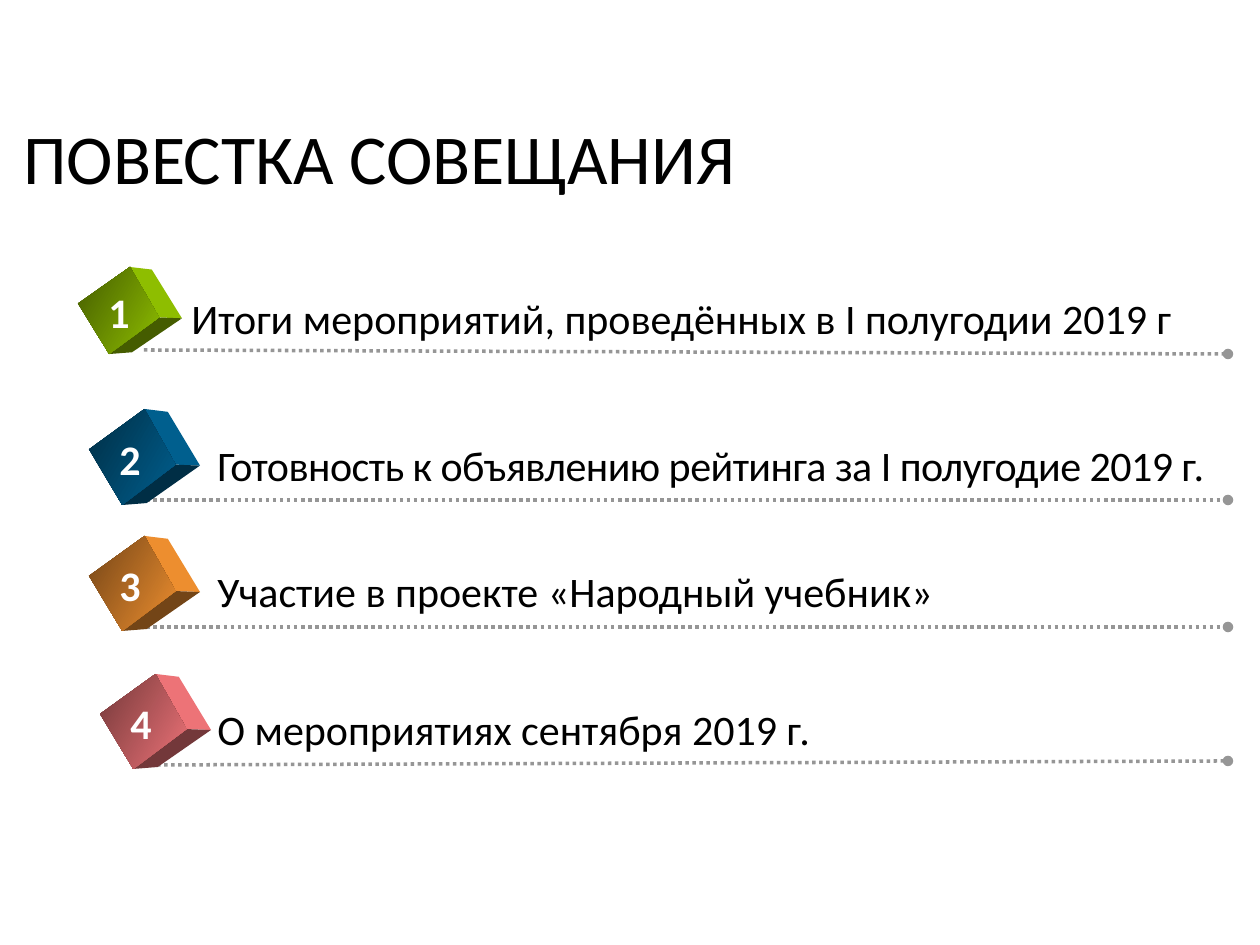
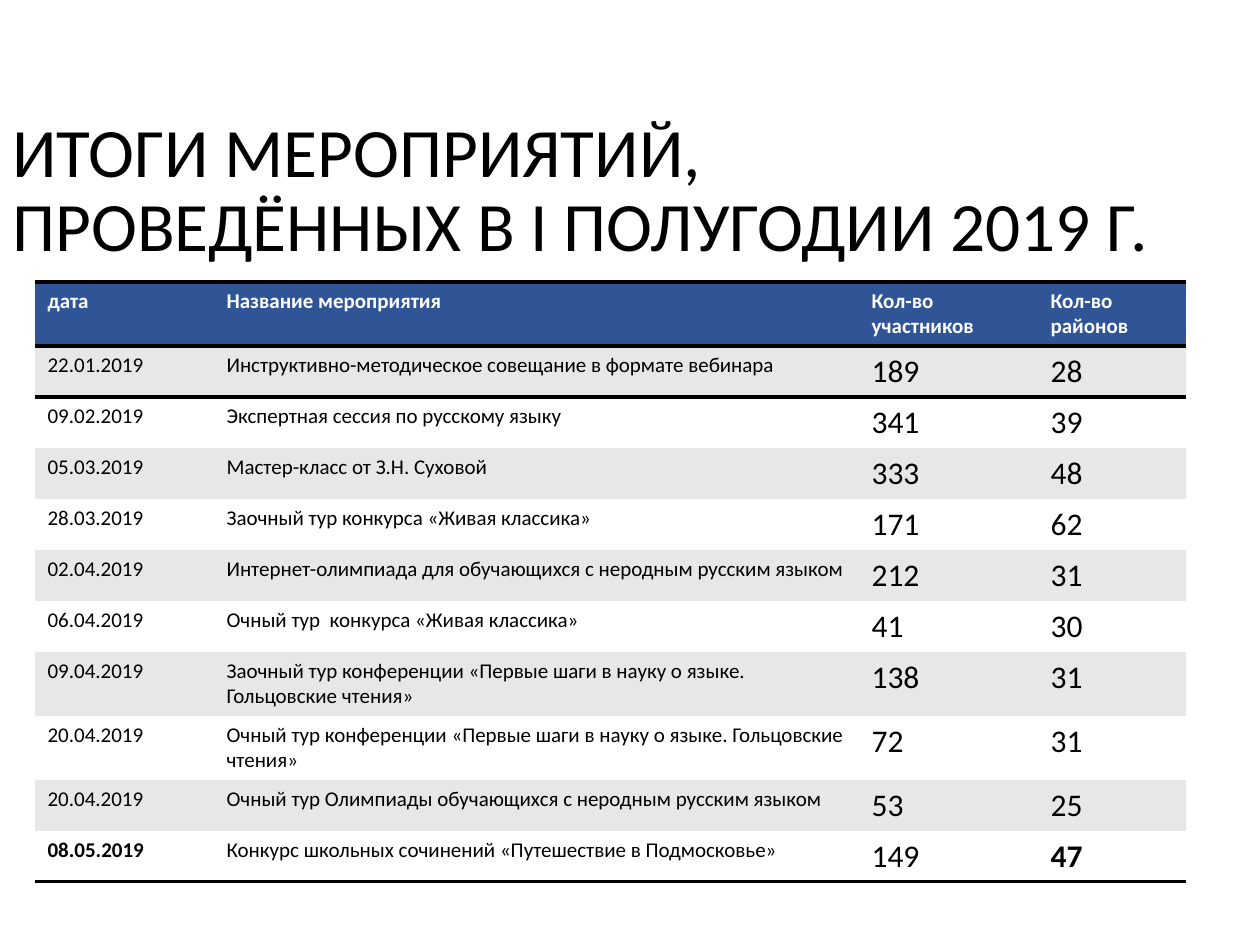
from typing import NamedTuple

from lxml import etree
from pptx import Presentation
from pptx.dml.color import RGBColor
from pptx.enum.dml import MSO_LINE
from pptx.enum.shapes import MSO_CONNECTOR
from pptx.enum.text import MSO_ANCHOR
from pptx.oxml.ns import qn
from pptx.util import Emu, Pt

FONT = "Calibri"
BLACK, WHITE, GREY = "000000", "FFFFFF", "969696"
HEADER, BAND = "2F5597", "E7E7E7"
NO_TABLE_STYLE = "{2D5ABB26-0587-4C30-8999-92F81FD0307C}"
LINE_END = 1228

# Corners of a cube, as fractions of its bounding box
LEFT, TOP, INNER, BOTTOM = (0, 0.42), (0.5, 0), (0.78, 0.58), (0.3, 1)
TOP_BACK, RIGHT, BOTTOM_BACK = (0.71, 0.03), (1, 0.59), (0.52, 0.98)


class AgendaItem(NamedTuple):
    text: str
    color: str
    cube: tuple[int, int, int, int]
    text_x: int
    line: tuple[int, int, int]  # start x, start y, end y
    spacing: int = 0


class Event(NamedTuple):
    date: str
    name: str
    people: str
    districts: str
    bold: bool = False
    height: int = 51


AGENDA = [
    AgendaItem("Итоги мероприятий, проведённых в I полугодии 2019 г", "99CC00",
               (78, 267, 104, 87), 179, (144, 350, 354)),
    AgendaItem("Готовность к объявлению рейтинга за I полугодие 2019 г.", "006699",
               (89, 409, 111, 96), 205, (139, 500, 500), -30),
    AgendaItem("Участие в проекте «Народный учебник»", "FF9933",
               (89, 536, 111, 95), 205, (139, 627, 627)),
    AgendaItem("О мероприятиях сентября 2019 г.", "FF7C80",
               (100, 674, 111, 95), 205, (150, 765, 761)),
]

EVENTS = [
    Event("22.01.2019", "Инструктивно-методическое совещание в формате вебинара", "189", "28"),
    Event("09.02.2019", "Экспертная сессия по русскому языку", "341", "39"),
    Event("05.03.2019", "Мастер-класс от З.Н. Суховой", "333", "48"),
    Event("28.03.2019", "Заочный тур конкурса «Живая классика»", "171", "62"),
    Event("02.04.2019", "Интернет-олимпиада для обучающихся с неродным русским языком",
          "212", "31"),
    Event("06.04.2019", "Очный тур  конкурса «Живая классика»", "41", "30"),
    Event("09.04.2019", "Заочный тур конференции «Первые шаги в науку о языке. "
          "Гольцовские чтения»", "138", "31", height=64),
    Event("20.04.2019", "Очный тур конференции «Первые шаги в науку о языке. "
          "Гольцовские чтения»", "72", "31", height=64),
    Event("20.04.2019", "Очный тур Олимпиады обучающихся с неродным русским языком",
          "53", "25"),
    Event("08.05.2019", "Конкурс школьных сочинений «Путешествие в Подмосковье»",
          "149", "47", bold=True),
]
COLUMNS = [("дата", 179), ("Название мероприятия", 645),
           ("Кол-во участников", 179), ("Кол-во\nрайонов", 148)]


def px(n: float) -> Emu:
    return Emu(round(n * 914400 / 126))


def rgb(color: str) -> RGBColor:
    return RGBColor.from_string(color)


def shade(color: str, factor: float) -> str:
    return "".join(f"{round(int(color[i:i + 2], 16) * factor):02X}" for i in (0, 2, 4))


def add_run(p, text: str, size: float, color: str = BLACK, bold: bool = False):
    r = p.add_run()
    r.text = text
    r.font.name, r.font.size, r.font.bold = FONT, Pt(size), bold
    r.font.color.rgb = rgb(color)
    return r


def add_box(s, x: int, y: int, w: int, h: int):
    tf = s.shapes.add_textbox(px(x), px(y), px(w), px(h)).text_frame
    tf.word_wrap = True
    return tf


def add_title(s, lines: list[str], x: int, y: int, w: int, h: int, size: float) -> None:
    tf = add_box(s, x, y, w, h)
    tf.vertical_anchor = MSO_ANCHOR.MIDDLE
    p = tf.paragraphs[0]
    p.line_spacing = 0.9
    for i, line in enumerate(lines):
        if i:
            p.add_line_break()
        add_run(p, line, size)


def add_dotted_line(s, x: int, y: int, end_y: int) -> None:
    line = s.shapes.add_connector(MSO_CONNECTOR.STRAIGHT, px(x), px(y), px(LINE_END), px(end_y))
    line.line.color.rgb = rgb(GREY)
    line.line.width = Pt(2)
    line.line.dash_style = MSO_LINE.ROUND_DOT
    etree.SubElement(line.line._get_or_add_ln(), qn("a:tailEnd"), type="oval")
    etree.SubElement(line._element.spPr, qn("a:effectLst"))


def add_face(s, item: AgendaItem, corners: list[tuple[float, float]]):
    x, y, w, h = item.cube
    points = [(px(x + u * w), px(y + v * h)) for u, v in corners]
    builder = s.shapes.build_freeform(*points[0], scale=1.0)
    builder.add_line_segments(points[1:], close=True)
    face = builder.convert_to_shape()
    face.shadow.inherit = False
    face.line.fill.background()
    return face


def add_cube(s, item: AgendaItem) -> None:
    bright, dark = shade(item.color, 0.93), shade(item.color, 0.45)
    sides = [([TOP, TOP_BACK, RIGHT, INNER], bright),
             ([BOTTOM, INNER, RIGHT, BOTTOM_BACK], dark)]
    for corners, color in sides:
        side = add_face(s, item, corners)
        side.fill.solid()
        side.fill.fore_color.rgb = rgb(color)
    front = add_face(s, item, [LEFT, TOP, INNER, BOTTOM])
    front.fill.gradient()
    front.fill.gradient_angle = 330
    for stop, color in zip(front.fill.gradient_stops, (dark, bright)):
        stop.color.rgb = rgb(color)


def add_agenda_item(s, number: int, item: AgendaItem) -> None:
    x, y, _, h = item.cube
    middle = y + h // 2
    add_dotted_line(s, *item.line)
    add_cube(s, item)
    tf = add_box(s, item.text_x, middle - 24, LINE_END - item.text_x, 64)
    r = add_run(tf.paragraphs[0], item.text, 24)
    if item.spacing:
        r.font._element.set("spc", str(item.spacing))
    tf = add_box(s, x + 18, middle - 30, 50, 63)
    add_run(tf.paragraphs[0], str(number), 24, WHITE, True)


def set_borders(cell, *sides: str) -> None:
    tcPr = cell._tc.get_or_add_tcPr()
    for i, side in enumerate(sides):
        ln = etree.Element(qn(f"a:{side}"), w=str(Pt(2)))
        fill = etree.SubElement(ln, qn("a:solidFill"))
        etree.SubElement(fill, qn("a:srgbClr"), val=BLACK)
        tcPr.insert(i, ln)


def fill_cell(cell, text: str, size: int, back: str, color: str = BLACK,
              bold: bool = False) -> None:
    cell.fill.solid()
    cell.fill.fore_color.rgb = rgb(back)
    tf = cell.text_frame
    for i, line in enumerate(text.split("\n")):
        p = tf.add_paragraph() if i else tf.paragraphs[0]
        add_run(p, line, size, color, bold)


def add_events_table(s) -> None:
    heights = [64] + [event.height for event in EVENTS]
    widths = [width for _, width in COLUMNS]
    table = s.shapes.add_table(len(heights), len(widths), px(35), px(282),
                               px(sum(widths)), px(sum(heights))).table
    table.first_row = table.horz_banding = False
    table._tbl.tblPr.find(qn("a:tableStyleId")).text = NO_TABLE_STYLE
    for row, height in zip(table.rows, heights):
        row.height = px(height)
    for c, (heading, width) in enumerate(COLUMNS):
        table.columns[c].width = px(width)
        fill_cell(table.cell(0, c), heading, 12, HEADER, WHITE, True)
        set_borders(table.cell(0, c), "lnT", "lnB")
        set_borders(table.cell(1, c), "lnT")
        set_borders(table.cell(len(EVENTS), c), "lnB")
    for i, event in enumerate(EVENTS, 1):
        back = BAND if i % 2 else WHITE
        for c, text in enumerate(event[:4]):
            fill_cell(table.cell(i, c), text, 12 if c < 2 else 18, back,
                      bold=event.bold and c in (0, 3))


def main() -> None:
    prs = Presentation()
    prs.slide_width, prs.slide_height = px(1260), px(945)
    blank = prs.slide_layouts[6]

    s = prs.slides.add_slide(blank)
    add_title(s, ["ПОВЕСТКА СОВЕЩАНИЯ"], 11, 100, 1041, 123, 40)
    for number, item in enumerate(AGENDA, 1):
        add_agenda_item(s, number, item)

    s = prs.slides.add_slide(blank)
    add_title(s, ["ИТОГИ МЕРОПРИЯТИЙ,", "ПРОВЕДЁННЫХ В I ПОЛУГОДИИ 2019 Г."],
              0, 104, 1260, 176, 39.6)
    add_events_table(s)
    prs.save("out.pptx")


if __name__ == "__main__":
    main()
